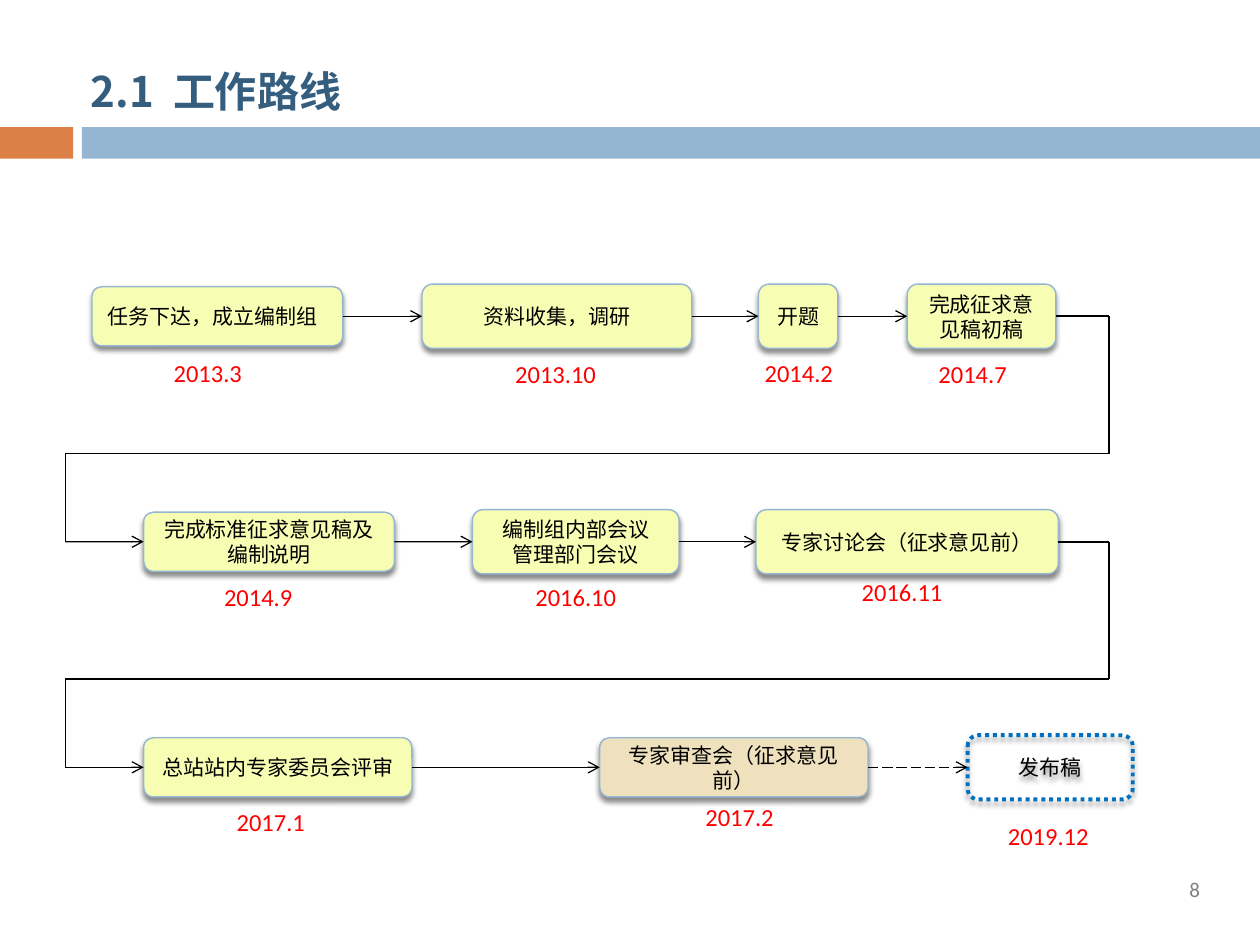
import dataclasses
import itertools

import pptx
import pptx.dml.color
import pptx.enum.dml
import pptx.enum.shapes
import pptx.enum.text
import pptx.oxml
import pptx.oxml.ns
import pptx.util

Inches = pptx.util.Inches
Pt = pptx.util.Pt
ALIGN = pptx.enum.text.PP_ALIGN
ANCHOR = pptx.enum.text.MSO_ANCHOR
DASH = pptx.enum.dml.MSO_LINE
SHAPE = pptx.enum.shapes.MSO_SHAPE
LEFT_SIDE, RIGHT_SIDE = 1, 3


@dataclasses.dataclass(frozen=True)
class Theme:
    cjk: str = "Noto Sans CJK SC"
    latin: str = "Calibri"
    title: str = "355D7E"
    accent: str = "DD8047"
    band: str = "94B6D2"
    done: str = "F7FEB4"
    review: str = "EFE0BE"
    release: str = "0070C0"
    ink: str = "000000"
    date: str = "FF0000"
    number: str = "808080"
    title_size: int = 24
    date_size: int = 14
    body_size: int = 12


@dataclasses.dataclass(frozen=True)
class Step:
    text: str
    left: float
    width: float
    height: float
    date: str
    date_center: float
    date_top: float
    kind: str = "done"
    align: ALIGN = ALIGN.CENTER


def rgb(value):
    return pptx.dml.color.RGBColor.from_string(value)


def add_xml(parent, tag, **attrs):
    child = pptx.oxml.parse_xml(f"<a:{tag} {pptx.oxml.ns.nsdecls('a')}/>")
    for name, value in attrs.items():
        child.set(name, str(value))
    parent.append(child)
    return child


class Deck:
    """Holds the theme and the current slide."""

    def __init__(self, theme):
        self.theme = theme
        self.prs = pptx.Presentation()
        self.prs.slide_width, self.prs.slide_height = Inches(10), Inches(7.5)
        self.slide = self.prs.slides.add_slide(self.prs.slide_layouts[5])

    def set_text(self, sp, text, font, size, color, align=ALIGN.LEFT,
                 anchor=ANCHOR.MIDDLE, bold=False):
        tf = sp.text_frame
        tf.text = text
        tf.word_wrap = True
        tf.auto_size = pptx.enum.text.MSO_AUTO_SIZE.NONE
        tf.vertical_anchor = anchor
        for p in tf.paragraphs:
            p.alignment = align
            for r in p.runs:
                r.font.size, r.font.bold = Pt(size), bold
                r.font.color.rgb = rgb(color)
                r.font.name = font
                add_xml(r._r.get_or_add_rPr(), "ea", typeface=font)
        return tf

    def title(self, text):
        sp = self.slide.shapes.title
        sp.left, sp.top = Inches(0.62), Inches(0.47)
        sp.width, sp.height = Inches(7.89), Inches(0.55)
        self.set_text(sp, text, self.theme.cjk, self.theme.title_size,
                      self.theme.title, anchor=ANCHOR.TOP, bold=True)

    def bar(self, left, width, color):
        sp = self.slide.shapes.add_shape(
            SHAPE.RECTANGLE, Inches(left), Inches(1.01), Inches(width), Inches(0.25))
        sp.shadow.inherit = False
        sp.fill.solid()
        sp.fill.fore_color.rgb = rgb(color)
        sp.line.fill.background()

    def label(self, text, left, top, width, height, size, color, **style):
        sp = self.slide.shapes.add_textbox(
            Inches(left), Inches(top), Inches(width), Inches(height))
        return self.set_text(sp, text, self.theme.latin, size, color, **style)

    def step(self, step, center_y):
        sp = self.slide.shapes.add_shape(
            SHAPE.ROUNDED_RECTANGLE, Inches(step.left),
            Inches(center_y - step.height / 2), Inches(step.width), Inches(step.height))
        if step.kind == "release":
            sp.fill.background()
            sp.line.color.rgb = rgb(self.theme.release)
            sp.line.width = Pt(2.25)
            sp.line.dash_style = DASH.ROUND_DOT
        else:
            fill = self.theme.review if step.kind == "review" else self.theme.done
            sp.fill.solid()
            sp.fill.fore_color.rgb = rgb(fill)
            sp.line.color.rgb = rgb(self.theme.band)
            sp.line.width = Pt(0.79)
        self.soft_shadow(sp)
        self.set_text(sp, step.text, self.theme.cjk, self.theme.body_size,
                      self.theme.ink, align=step.align)
        self.label(step.date, step.date_center - 0.55, step.date_top, 1.1, 0.31,
                   self.theme.date_size, self.theme.date, align=ALIGN.CENTER)
        return sp

    def soft_shadow(self, sp):
        sp.shadow.inherit = False
        effects = sp._element.spPr.find(pptx.oxml.ns.qn("a:effectLst"))
        shadow = add_xml(effects, "outerShdw", blurRad=Pt(3), dist=Pt(2.4),
                         dir=90 * 60000, rotWithShape=0)
        color = add_xml(shadow, "srgbClr", val=self.theme.ink)
        add_xml(color, "alpha", val=45000)

    def line(self, start, end, source=None, target=None, dashed=False):
        """Draw a straight line; one that reaches a target box gets an arrowhead."""
        cx = self.slide.shapes.add_connector(
            pptx.enum.shapes.MSO_CONNECTOR.STRAIGHT,
            *(Inches(v) for v in (*start, *end)))
        cx.line.color.rgb = rgb(self.theme.ink)
        cx.line.width = Pt(0.75 if target else 1)
        if dashed:
            cx.line.dash_style = DASH.LONG_DASH
        if source:
            cx.begin_connect(source, RIGHT_SIDE)
        if target:
            cx.end_connect(target, LEFT_SIDE)
            add_xml(cx.line._get_or_add_ln(), "tailEnd", type="arrow")
        add_xml(cx._element.spPr, "effectLst")

    def wrap(self, source, target, start_y, turn_y, end_y):
        """Lead from the end of one row to the start of the next."""
        right, left = 8.8, 0.52
        points = [(source.left.inches + source.width.inches, start_y),
                  (right, start_y), (right, turn_y), (left, turn_y),
                  (left, end_y), (target.left.inches, end_y)]
        pairs = list(itertools.pairwise(points))
        for i, (start, end) in enumerate(pairs):
            self.line(start, end, source if i == 0 else None,
                      target if i == len(pairs) - 1 else None)


ROWS = [
    [Step("任务下达，成立编制组", 0.73, 1.99, 0.47, "2013.3", 1.65, 2.8, align=ALIGN.LEFT),
     Step("资料收集，调研", 3.35, 2.14, 0.51, "2013.10", 4.41, 2.81),
     Step("开题", 6.02, 0.63, 0.51, "2014.2", 6.34, 2.8),
     Step("完成征求意见稿初稿", 7.2, 1.18, 0.51, "2014.7", 7.72, 2.81)],
    [Step("完成标准征求意见稿及编制说明", 1.14, 1.99, 0.47, "2014.9", 2.05, 4.58),
     Step("编制组内部会议\n管理部门会议", 3.75, 1.64, 0.51, "2016.10", 4.57, 4.58),
     Step("专家讨论会（征求意见前）", 6, 2.4, 0.51, "2016.11", 7.16, 4.54)],
    [Step("总站站内专家委员会评审", 1.14, 2.13, 0.47, "2017.1", 2.15, 6.37),
     Step("专家审查会（征求意见前）", 4.76, 2.13, 0.47, "2017.2", 5.87, 6.33, "review"),
     Step("发布稿", 7.68, 1.31, 0.51, "2019.12", 8.32, 6.48, "release")],
]
FIRST_ROW, ROW_PITCH, TURN_DROP = 2.51, 1.79, 1.09


def main():
    theme = Theme()
    deck = Deck(theme)

    # Heading and bars
    deck.bar(0, 0.58, theme.accent)
    deck.bar(0.65, 9.35, theme.band)
    deck.title("2.1  工作路线")

    # Steps with dates, joined along each row
    centers = [FIRST_ROW + i * ROW_PITCH for i in range(len(ROWS))]
    boxes = []
    for steps, y in zip(ROWS, centers):
        row = [deck.step(step, y) for step in steps]
        for source, target, step in zip(row, row[1:], steps[1:]):
            deck.line((0, y), (1, y), source, target, dashed=step.kind == "release")
        boxes.append(row)

    # Turns from row to row
    for (upper, y), (lower, next_y) in itertools.pairwise(zip(boxes, centers)):
        deck.wrap(upper[-1], lower[0], y, y + TURN_DROP, next_y)

    # Slide number
    tf = deck.label("8", 9.34, 6.95, 0.58, 0.27, theme.body_size, theme.number,
                    anchor=ANCHOR.TOP)
    tf.paragraphs[0].line_spacing = 0.8

    deck.prs.save("out.pptx")


if __name__ == "__main__":
    main()
